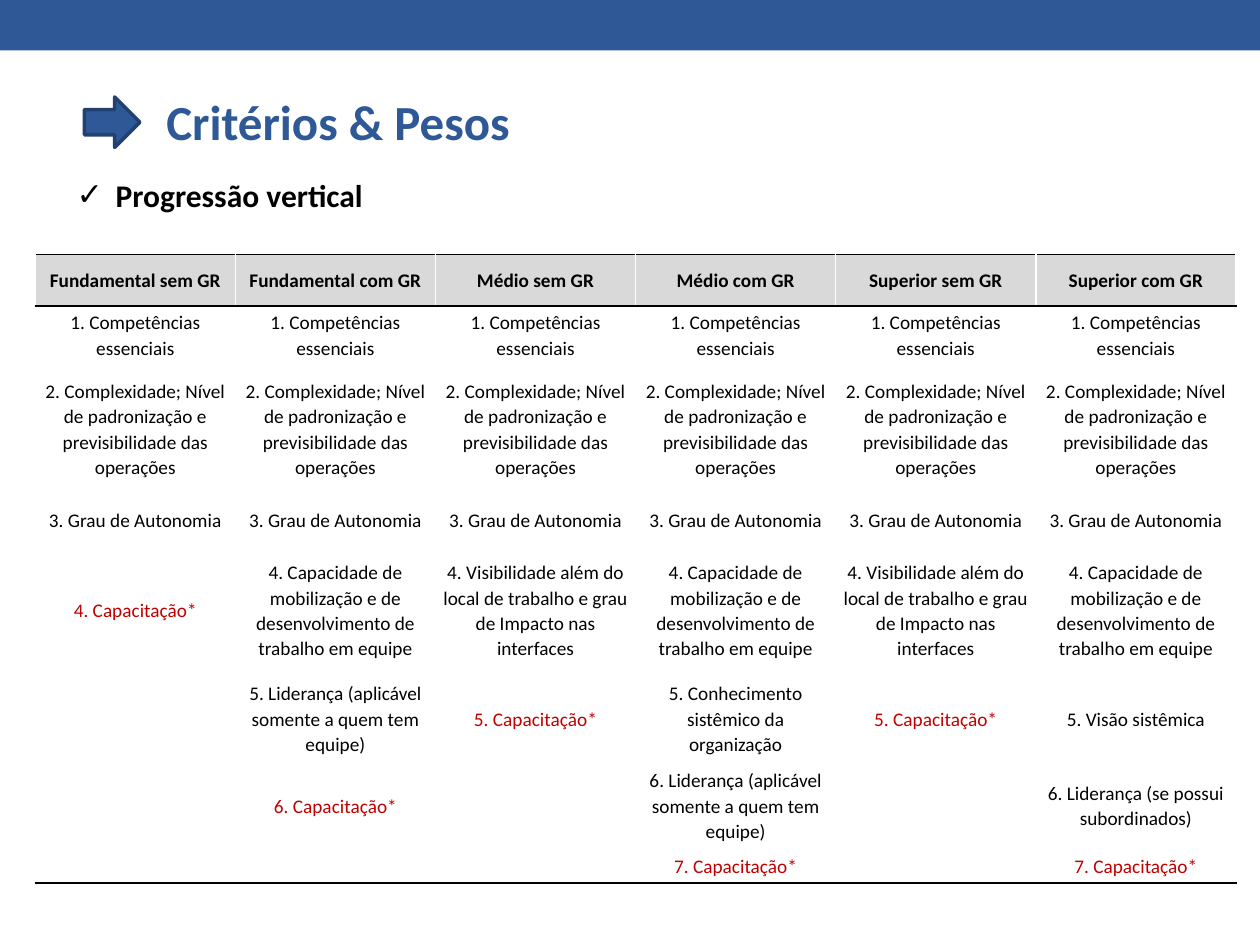
"""Build the slide on criteria and weights for vertical progression."""
from lxml import etree
from pptx import Presentation, util as u
from pptx.dml.color import RGBColor
from pptx.enum import shapes, text
from pptx.oxml.ns import qn

COLORS = {"blue": "2F5897", "navy": "234170", "black": "000000",
          "white": "FFFFFF", "gray": "D9D9D9", "red": "C00000"}
FONT = "Calibri"
TITLE = "Critérios & Pesos"
SUBTITLE = "Progressão vertical"
HEADERS = [f"{level} {group} GR" for level in ("Fundamental", "Médio", "Superior")
           for group in ("sem", "com")]
COMMON = ["Competências essenciais",
          "Complexidade; Nível de padronização e previsibilidade das operações",
          "Grau de Autonomia"]
TEAM = "Capacidade de mobilização e de desenvolvimento de trabalho em equipe"
VISIBILITY = "Visibilidade além do local de trabalho e grau de Impacto nas interfaces"
LEADERSHIP = "Liderança (aplicável somente a quem tem equipe)"
TRAINING = "Capacitação*"
SPECIFIC = [
    [],
    [TEAM, LEADERSHIP],
    [VISIBILITY],
    [TEAM, "Conhecimento sistêmico da organização", LEADERSHIP],
    [VISIBILITY],
    [TEAM, "Visão sistêmica", "Liderança (se possui subordinados)"],
]
ROW_HEIGHTS = [0.41, 0.46, 1.03, 0.41, 1.03, 0.69, 0.69, 0.27]
TABLE_LEFT, TABLE_TOP, TABLE_WIDTH = 0.28, 2.02, 9.53


def rgb(name):
    return RGBColor.from_string(COLORS[name])


def place(shape, *box):
    shape.left, shape.top, shape.width, shape.height = map(u.Inches, box)


def add_run(paragraph, words, size, color, bold=False):
    run = paragraph.add_run()
    run.text = words
    run.font.name, run.font.size, run.font.bold = FONT, u.Pt(size), bold
    run.font.color.rgb = rgb(color)


def add_block(slide, kind, box, fill, line=None):
    shape = slide.shapes.add_shape(kind, *map(u.Inches, box))
    shape.shadow.inherit = False
    shape.fill.solid()
    shape.fill.fore_color.rgb = rgb(fill)
    if line:
        shape.line.color.rgb = rgb(line)
        shape.line.width = u.Pt(2.08)
    else:
        shape.line.fill.background()


def set_borders(cell, top, bottom):
    properties = cell._tc.get_or_add_tcPr()
    for side, color in (("L", "white"), ("R", "white"), ("T", top), ("B", bottom)):
        line = etree.SubElement(properties, qn(f"a:ln{side}"), w=str(u.Pt(1)))
        fill = etree.SubElement(line, qn("a:solidFill"))
        etree.SubElement(fill, qn("a:srgbClr"), val=COLORS[color])


def fill_cell(cell, words, row):
    last = len(ROW_HEIGHTS) - 1
    set_borders(cell, "black" if row < 2 else "white",
                "black" if row in (0, last) else "white")
    cell.fill.solid()
    cell.fill.fore_color.rgb = rgb("white" if row else "gray")
    cell.margin_left = cell.margin_right = u.Inches(0.05)
    cell.margin_top = cell.margin_bottom = 0
    cell.vertical_anchor = text.MSO_ANCHOR.MIDDLE
    paragraph = cell.text_frame.paragraphs[0]
    paragraph.alignment = text.PP_ALIGN.CENTER
    paragraph.line_spacing, paragraph.space_after = 1.07, u.Pt(8)
    if words:
        add_run(paragraph, words, 11, "red" if TRAINING in words else "black", row == 0)
    else:
        etree.SubElement(paragraph._p, qn("a:endParaRPr"), sz="1100")


def add_criteria_table(slide):
    frame = slide.shapes.add_table(
        len(ROW_HEIGHTS), len(HEADERS), u.Inches(TABLE_LEFT), u.Inches(TABLE_TOP),
        u.Inches(TABLE_WIDTH), u.Inches(sum(ROW_HEIGHTS)))
    table = frame.table
    for row, height in zip(table.rows, ROW_HEIGHTS):
        row.height = u.Inches(height)
    for column, (header, specific) in enumerate(zip(HEADERS, SPECIFIC)):
        table.columns[column].width = u.Inches(TABLE_WIDTH / len(HEADERS))
        criteria = COMMON + specific + [TRAINING]
        entries = [header] + [f"{n}. {name}" for n, name in enumerate(criteria, 1)]
        entries += [""] * (len(ROW_HEIGHTS) - len(entries))
        for row, words in enumerate(entries):
            fill_cell(table.cell(row, column), words, row)


def add_subtitle(slide):
    box = slide.shapes.add_textbox(0, 0, 0, 0)
    place(box, 0.51, 1.35, 5, 0.4)
    box.text_frame.word_wrap = True
    paragraph = box.text_frame.paragraphs[0]
    properties = paragraph._p.get_or_add_pPr()
    indent = u.Inches(0.31)
    properties.set("marL", str(indent))
    properties.set("indent", str(-indent))
    etree.SubElement(properties, qn("a:buFont"), typeface="Wingdings")
    etree.SubElement(properties, qn("a:buChar"), char="✓")
    properties.find(qn("a:buFont")).set("typeface", FONT)
    add_run(paragraph, SUBTITLE, 18, "black", True)


def set_title(slide):
    title = slide.shapes.title
    place(title, 1.22, 0.68, 3.23, 0.57)
    frame = title.text_frame
    frame.auto_size = text.MSO_AUTO_SIZE.NONE
    frame.vertical_anchor = text.MSO_ANCHOR.TOP
    paragraph = frame.paragraphs[0]
    paragraph.alignment = text.PP_ALIGN.LEFT
    add_run(paragraph, TITLE, 28, "blue", True)


def main():
    presentation = Presentation()
    presentation.slide_width, presentation.slide_height = u.Inches(10), u.Inches(7.5)
    slide = presentation.slides.add_slide(presentation.slide_layouts[5])
    add_block(slide, shapes.MSO_SHAPE.RECTANGLE, (0, 0, 10, 0.4), "blue")
    add_criteria_table(slide)
    add_subtitle(slide)
    add_block(slide, shapes.MSO_SHAPE.RIGHT_ARROW, (0.67, 0.77, 0.44, 0.4), "blue", "navy")
    set_title(slide)
    presentation.save("out.pptx")


if __name__ == "__main__":
    main()
